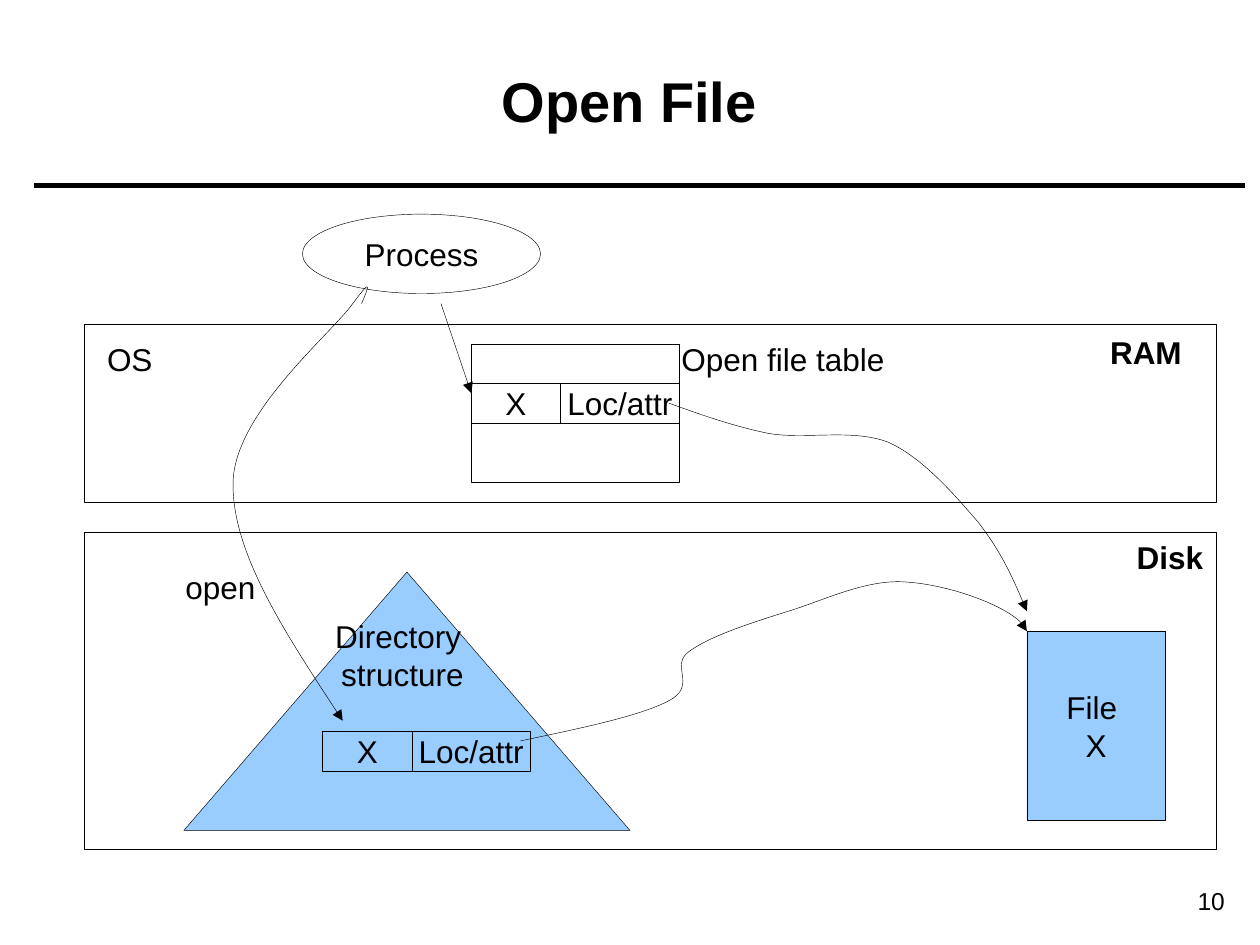
from lxml.etree import SubElement
from pptx import Presentation
from pptx.dml.color import RGBColor
from pptx.enum.shapes import MSO_CONNECTOR, MSO_SHAPE
from pptx.enum.text import MSO_ANCHOR, MSO_AUTO_SIZE, PP_ALIGN
from pptx.oxml.ns import qn
from pptx.util import Inches, Pt

COLORS = {"ink": "000000", "storage": "99CCFF"}
FONT = "Arial"
THIN = 0.25
INSETS = {"margin_left": 0.1, "margin_right": 0.1, "margin_top": 0.05, "margin_bottom": 0.05}


def write_text(shape, text, size=18, bold=False, align=PP_ALIGN.CENTER,
               anchor=MSO_ANCHOR.MIDDLE, wrap=False, fit=MSO_AUTO_SIZE.NONE):
    """Fill a shape with one paragraph for each line of text."""
    frame = shape.text_frame
    frame_format = {name: Inches(inset) for name, inset in INSETS.items()}
    frame_format.update(word_wrap=wrap, vertical_anchor=anchor, auto_size=fit, text=text)
    for name, value in frame_format.items():
        setattr(frame, name, value)
    for paragraph in frame.paragraphs:
        paragraph.alignment = align
        for name, value in {"name": FONT, "size": Pt(size), "bold": bold}.items():
            setattr(paragraph.font, name, value)
        paragraph.font.color.rgb = RGBColor.from_string(COLORS["ink"])


def add_text(slide, left, top, width, height, text, **text_format):
    """Add a text box."""
    text_box = slide.shapes.add_textbox(*map(Inches, (left, top, width, height)))
    write_text(text_box, text, **text_format)


def add_label(slide, left, top, width, height, text, bold=False):
    """Add a diagram label that grows with its text."""
    add_text(slide, left, top, width, height, text, bold=bold,
             anchor=MSO_ANCHOR.TOP, fit=MSO_AUTO_SIZE.SHAPE_TO_FIT_TEXT)


def style_line(shape, width=THIN, arrow=False):
    """Draw the line in ink, with an arrowhead at its end on request."""
    shape.line.color.rgb = RGBColor.from_string(COLORS["ink"])
    shape.line.width = Pt(width)
    if arrow:
        line = shape.line._get_or_add_ln()
        SubElement(line, qn("a:tailEnd"), type="triangle")


def add_figure(slide, kind, left, top, width, height, text="", fill=None):
    """Add an outlined preset shape."""
    shape = slide.shapes.add_shape(kind, *map(Inches, (left, top, width, height)))
    shape.shadow.inherit = False
    if fill:
        shape.fill.solid()
        shape.fill.fore_color.rgb = RGBColor.from_string(COLORS[fill])
    else:
        shape.fill.background()
    style_line(shape)
    if text:
        write_text(shape, text)


def add_straight(slide, start, end, width=THIN, arrow=False):
    """Add a straight connector."""
    connector = slide.shapes.add_connector(
        MSO_CONNECTOR.STRAIGHT, *map(Inches, (*start, *end)))
    style_line(connector, width, arrow)
    SubElement(connector._element.spPr, qn("a:effectLst"))


def add_curve(slide, points):
    """Add an arrow of Bezier curves, each with two controls and an end."""
    start, *others = [tuple(map(Inches, point)) for point in points]
    builder = slide.shapes.build_freeform(*start)
    builder.add_line_segments(others, close=False)
    curve = builder.convert_to_shape()
    curve.shadow.inherit = False
    curve.fill.background()
    style_line(curve, arrow=True)
    outline = next(curve._element.iter(qn("a:path")))
    segments = outline.findall(qn("a:lnTo"))
    for first in range(0, len(segments), 3):
        bezier = SubElement(outline, qn("a:cubicBezTo"))
        for segment in segments[first:first + 3]:
            bezier.append(segment[0])
            outline.remove(segment)


def add_entry(slide, left, top):
    """Add a file entry of a name cell and a location cell."""
    name_width, location_width, height = 0.71, 0.94, 0.32
    add_figure(slide, MSO_SHAPE.RECTANGLE, left, top, name_width, height, "X")
    add_figure(slide, MSO_SHAPE.RECTANGLE, left + name_width, top,
               location_width, height, "Loc/attr")


def add_frame(slide):
    """Add the title, the rule below it and the page number."""
    add_straight(slide, (0.27, 1.47), (9.88, 1.47), width=3)
    add_text(slide, 0.35, 0.17, 9.29, 1.25, "Open File", size=32, bold=True, wrap=True)
    add_text(slide, 8.78, 6.98, 1.04, 0.34, "10", size=14, align=PP_ALIGN.RIGHT,
             anchor=MSO_ANCHOR.TOP, wrap=True)


def add_disk(slide, left, top, width, height):
    """Add the disk with its directory structure and file."""
    add_figure(slide, MSO_SHAPE.ISOSCELES_TRIANGLE, left + 0.79, top + 0.32, 3.54, 2.05,
               fill="storage")
    add_figure(slide, MSO_SHAPE.RECTANGLE, left, top, width, height)
    add_figure(slide, MSO_SHAPE.RECTANGLE, left + 7.48, top + 0.79, 1.1, 1.5,
               "File \nX", fill="storage")
    add_entry(slide, left + 1.89, top + 1.58)
    add_label(slide, left + 1.89, top + 0.63, 1.27, 0.7, "Directory \nstructure")
    add_label(slide, left + 0.68, top + 0.24, 0.8, 0.4, "open")
    add_label(slide, left + width - 0.73, top, 0.73, 0.4, "Disk", bold=True)


def add_memory(slide, left, top, width, height):
    """Add the RAM with the open file table."""
    add_figure(slide, MSO_SHAPE.RECTANGLE, left, top, width, height)
    add_label(slide, left + 0.08, top + 0.08, 0.56, 0.4, "OS")
    add_entry(slide, left + 3.07, top + 0.47)
    add_figure(slide, MSO_SHAPE.RECTANGLE, left + 3.07, top + 0.16, 1.65, 1.1)
    add_label(slide, left + 4.64, top + 0.08, 1.81, 0.4, "Open file table")
    add_label(slide, left + 8.04, top + 0.02, 0.77, 0.4, "RAM", bold=True)


def add_flows(slide):
    """Add the arrows from the process and from both entries."""
    add_straight(slide, (3.5, 2.41), (3.74, 3.12), arrow=True)
    process_to_directory = [
        (2.87, 2.41), (2.92, 2.29), (2.97, 2.18), (2.8, 2.41),
        (2.63, 2.65), (1.86, 3.28), (1.85, 3.83),
        (1.84, 4.38), (2.28, 5.05), (2.72, 5.72)]
    table_to_file = [
        (5.31, 3.2), (5.56, 3.29), (5.81, 3.38), (6.1, 3.44),
        (6.39, 3.49), (6.77, 3.4), (7.05, 3.51),
        (7.32, 3.63), (7.57, 3.92), (7.76, 4.14),
        (7.94, 4.37), (8.05, 4.61), (8.15, 4.85)]
    directory_to_file = [
        (4.13, 5.88), (4.61, 5.78), (5.09, 5.68), (5.31, 5.56),
        (5.54, 5.44), (5.31, 5.28), (5.47, 5.17),
        (5.63, 5.05), (5.97, 4.94), (6.26, 4.85),
        (6.55, 4.76), (6.89, 4.59), (7.2, 4.62),
        (7.52, 4.64), (8.1, 4.84), (8.15, 5.01)]
    for points in (process_to_directory, table_to_file, directory_to_file):
        add_curve(slide, points)


def main():
    """Build the slide and save it."""
    presentation = Presentation()
    presentation.slide_width = Inches(10)
    presentation.slide_height = Inches(7.5)
    slide = presentation.slides.add_slide(presentation.slide_layouts[6])
    add_frame(slide)
    add_disk(slide, 0.67, 4.22, 8.98, 2.52)
    add_memory(slide, 0.67, 2.57, 8.98, 1.42)
    add_figure(slide, MSO_SHAPE.OVAL, 2.4, 1.7, 1.89, 0.63, "Process")
    add_flows(slide)
    presentation.save("out.pptx")


if __name__ == "__main__":
    main()
